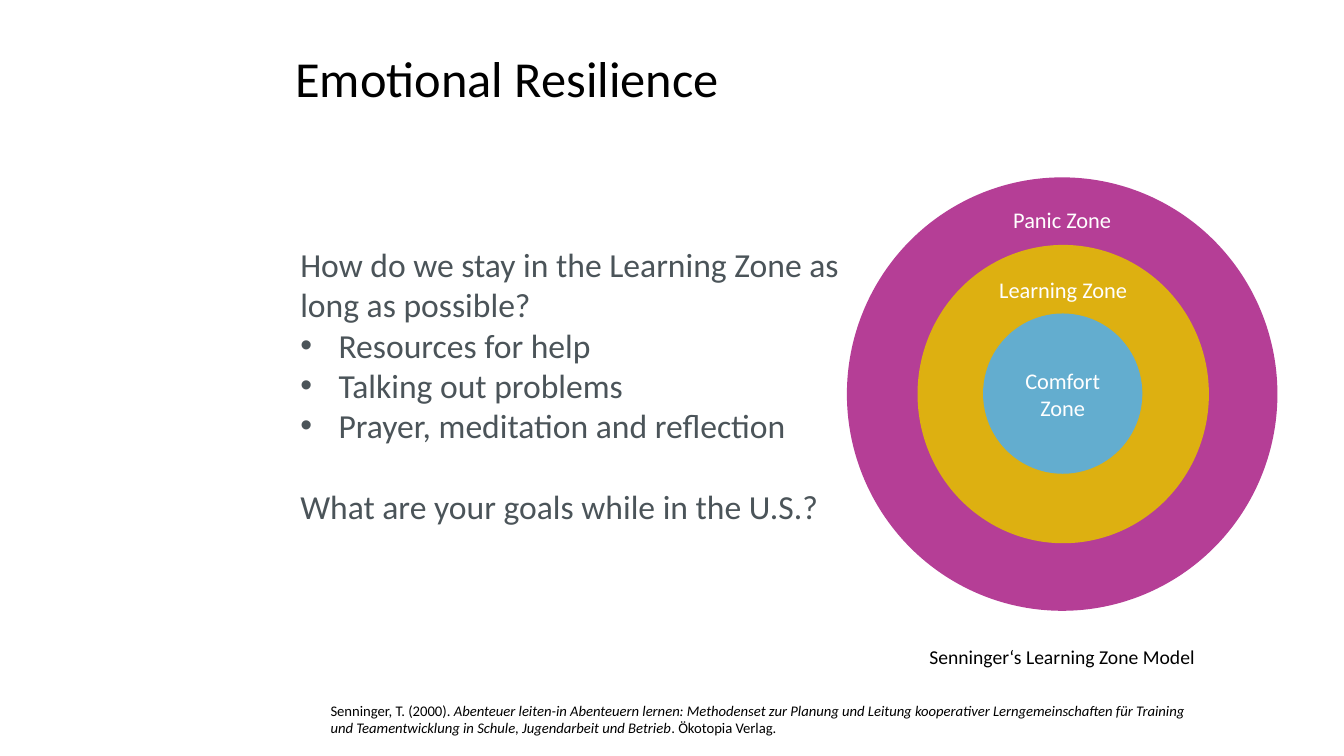
from dataclasses import dataclass

from lxml.etree import SubElement
from pptx import Presentation
from pptx.dml.color import RGBColor
from pptx.enum.shapes import MSO_SHAPE
from pptx.enum.text import MSO_AUTO_SIZE, PP_ALIGN
from pptx.oxml.ns import qn
from pptx.util import Pt

EMU_PER_PX = 9144


@dataclass(frozen=True)
class Theme:
    """Font, colours and type sizes of the slide."""
    font: str = "Calibri"
    black: str = "000000"
    white: str = "FFFFFF"
    slate: str = "4B5459"
    panic: str = "B53E96"
    learning: str = "DDB011"
    comfort: str = "63ADCF"
    title: float = 36
    body: float = 24
    zone: float = 16
    caption: float = 14
    citation: float = 10.5


class SlideBuilder:
    """Holds the theme and the page, and draws elements in px."""

    def __init__(self, deck, theme):
        """Add a blank page to the deck."""
        self.theme = theme
        self.page = deck.slides.add_slide(deck.slide_layouts[6])
        self.canvas = self.page.shapes

    def start_group(self):
        """Send the following elements into a new group."""
        self.canvas = self.page.shapes.add_group_shape().shapes

    def end_group(self):
        """Send the following elements to the page again."""
        self.canvas = self.page.shapes

    def style(self, para, size, color):
        """Format every span of a paragraph."""
        for span in para.runs:
            span.font.name = self.theme.font
            span.font.size = Pt(size)
            span.font.color.rgb = RGBColor.from_string(color)

    def text(self, area, content, size, color, align=PP_ALIGN.LEFT):
        """Add a wrapping text box and return its paragraphs."""
        box = self.canvas.add_textbox(*(px * EMU_PER_PX for px in area))
        frame = box.text_frame
        frame.text = content
        frame.word_wrap = True
        frame.auto_size = MSO_AUTO_SIZE.SHAPE_TO_FIT_TEXT
        for para in frame.paragraphs:
            para.alignment = align
            self.style(para, size, color)
        return frame.paragraphs

    def bullet(self, para, indent):
        """Give a paragraph a hanging bullet."""
        properties = para._p.get_or_add_pPr()
        properties.set("marL", str(indent * EMU_PER_PX))
        properties.set("indent", str(-indent * EMU_PER_PX))
        SubElement(properties, qn("a:buFont"), typeface="Arial")
        SubElement(properties, qn("a:buChar"), char="•")

    def citation(self, area, before, work, after):
        """Add a reference with the title of the work in italics."""
        para = self.text(area, before, self.theme.citation, self.theme.black)[0]
        for part in (work, after):
            span = para.add_run()
            span.text = part
            span.font.italic = part == work
        self.style(para, self.theme.citation, self.theme.black)

    def zone(self, area, color):
        """Add a plain filled circle."""
        circle = self.canvas.add_shape(
            MSO_SHAPE.FLOWCHART_CONNECTOR, *(px * EMU_PER_PX for px in area))
        circle.shadow.inherit = False
        circle.fill.solid()
        circle.fill.fore_color.rgb = RGBColor.from_string(color)
        circle.line.fill.background()


def main():
    """Build the slide and save it."""
    theme = Theme()
    deck = Presentation()
    deck.slide_width = 1333 * EMU_PER_PX
    deck.slide_height = 750 * EMU_PER_PX
    slide = SlideBuilder(deck, theme)

    slide.text((283, 42, 984, 71), "Emotional Resilience", theme.title, theme.black)

    body = slide.text((288, 237, 557, 293), "\n".join((
        "How do we stay in the Learning Zone as long as possible?",
        "Resources for help",
        "Talking out problems",
        "Prayer, meditation and reflection",
        "What are your goals while in the U.S.?",
    )), theme.body, theme.slate)
    for para in body[1:-1]:
        slide.bullet(para, 38)
    body[-1].space_before = Pt(29)

    slide.start_group()
    for area, color in (
        ((840, 176, 427, 430), theme.panic),
        ((910, 243, 289, 296), theme.learning),
        ((975, 311, 158, 159), theme.comfort),
    ):
        slide.zone(area, color)
    for area, label in (
        ((997, 359, 114, 64), "Comfort Zone"),
        ((947, 269, 215, 37), "Learning Zone"),
        ((946, 200, 215, 37), "Panic Zone"),
    ):
        slide.text(area, label, theme.zone, theme.white, PP_ALIGN.CENTER)
    slide.end_group()

    slide.citation(
        (318, 691, 881, 47),
        "Senninger, T. (2000). ",
        "Abenteuer leiten-in Abenteuern lernen: Methodenset zur Planung und "
        "Leitung kooperativer Lerngemeinschaften für Training und "
        "Teamentwicklung in Schule, Jugendarbeit und Betrieb",
        ". Ökotopia Verlag.")
    slide.text((840, 635, 427, 34), "Senninger‘s Learning Zone Model",
               theme.caption, theme.black, PP_ALIGN.CENTER)

    deck.save("out.pptx")


if __name__ == "__main__":
    main()
